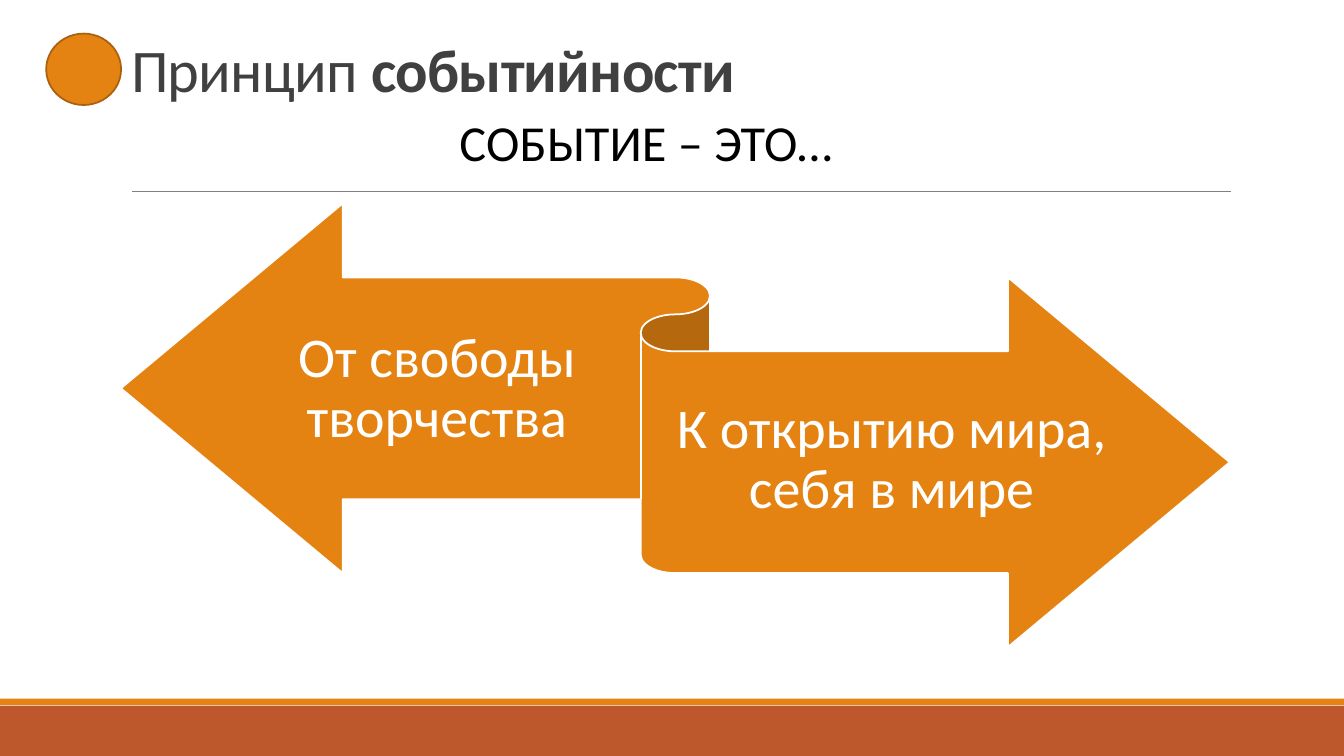
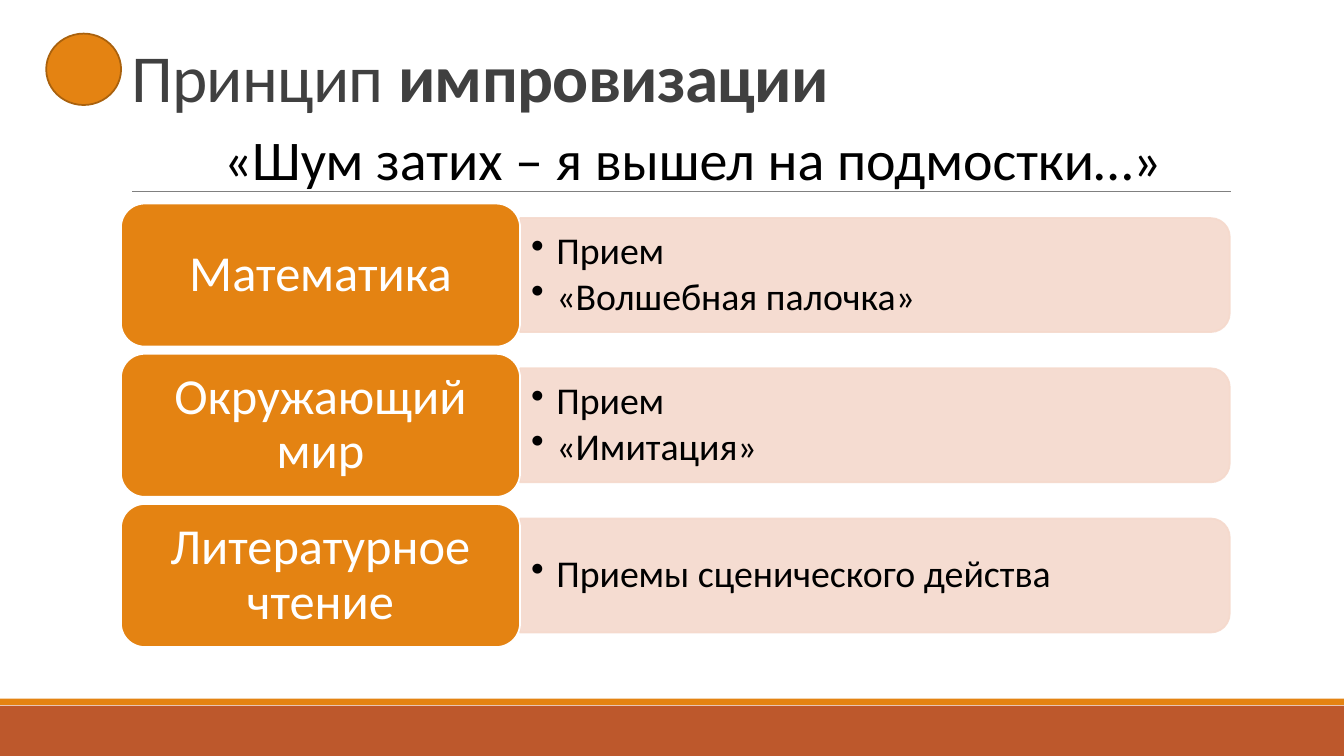
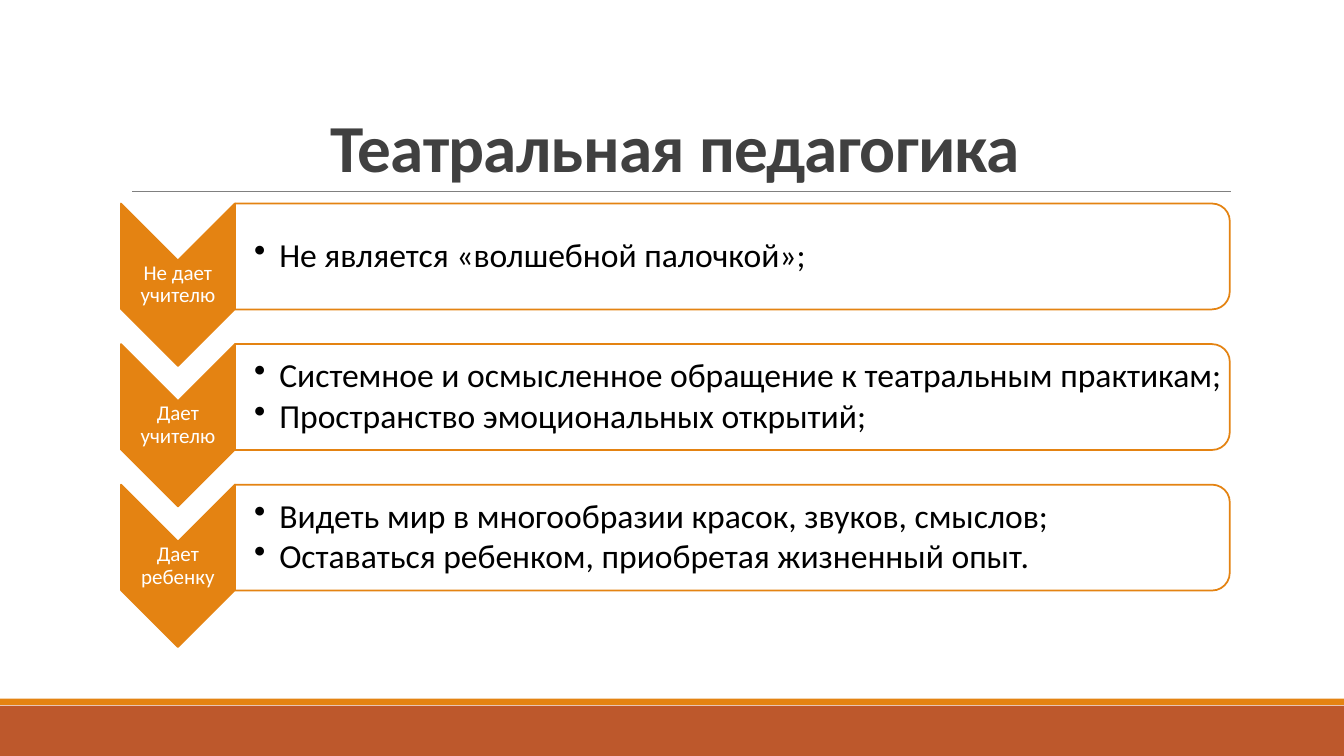
from lxml.etree import SubElement
from pptx import Presentation
from pptx.dml.color import RGBColor
from pptx.enum.shapes import MSO_CONNECTOR, MSO_SHAPE
from pptx.enum.text import MSO_ANCHOR, MSO_AUTO_SIZE, PP_ALIGN
from pptx.oxml.ns import qn
from pptx.util import Pt

LEFT, CENTER = PP_ALIGN.LEFT, PP_ALIGN.CENTER
TOP, MIDDLE, BOTTOM = MSO_ANCHOR.TOP, MSO_ANCHOR.MIDDLE, MSO_ANCHOR.BOTTOM
RECTANGLE, OVAL = MSO_SHAPE.RECTANGLE, MSO_SHAPE.OVAL
ROUNDED, ROUNDED_TOP = MSO_SHAPE.ROUNDED_RECTANGLE, MSO_SHAPE.ROUND_2_SAME_RECTANGLE
RIBBON, CHEVRON = MSO_SHAPE.LEFT_RIGHT_RIBBON, MSO_SHAPE.CHEVRON

FONT = "Calibri"
COLORS = {
    "orange": "E48312",
    "dark_orange": "A9610D",
    "rust": "BD582C",
    "pale": "F5D9CC",
    "gray": "808080",
    "title": "404040",
    "black": "000000",
    "white": "FFFFFF",
}
CONTENT_LEFT, CONTENT_TOP, CONTENT_WIDTH = 86.4, 145.4, 792


def add_shape(slide, kind, left, top, width, height, fill, line=None, turned=False):
    """Add a shape by its visible box; a turned one is rotated clockwise by 90 degrees."""
    if turned:
        left, top = left + (width - height) / 2, top + (height - width) / 2
        width, height = height, width
    shape = slide.shapes.add_shape(kind, Pt(left), Pt(top), Pt(width), Pt(height))
    shape.rotation = 90 if turned else 0
    shape.shadow.inherit = False
    shape.fill.solid()
    shape.fill.fore_color.rgb = RGBColor.from_string(COLORS[fill])
    if line:
        shape.line.color.rgb = RGBColor.from_string(COLORS[line])
        shape.line.width = Pt(1.25)
    else:
        shape.line.fill.background()
    return shape


def write_text(shape, text, size, color, anchor=MIDDLE, alignment=CENTER,
               insets=(7.2, 3.6, 7.2, 3.6), line_spacing=0.9, bullets=False):
    """Fill a shape with text; insets run left, top, right, bottom."""
    frame = shape.text_frame
    frame.text = text
    frame.word_wrap = True
    frame.auto_size = MSO_AUTO_SIZE.NONE
    frame.vertical_anchor = anchor
    frame.margin_left, frame.margin_top, frame.margin_right, frame.margin_bottom = map(Pt, insets)
    for paragraph in frame.paragraphs:
        paragraph.alignment = alignment
        paragraph.line_spacing = line_spacing
        if bullets:
            paragraph.space_after = Pt(round(size * 0.12, 1))
            properties = paragraph._p.get_or_add_pPr()
            properties.set("marL", str(Pt(18)))
            properties.set("indent", str(-Pt(18)))
            SubElement(properties, qn("a:buChar"), char="•")
        for run in paragraph.runs:
            run.font.name = FONT
            run.font.size = Pt(size)
            run.font.color.rgb = RGBColor.from_string(COLORS[color])


presentation = Presentation()
presentation.slide_width, presentation.slide_height = Pt(960), Pt(540)
layout = presentation.slide_layouts[5]

# Titles: plain part, bold part, size, top, height, alignment
titles = [
    ("Принцип ", "событийности", 43.2, 18.7, 59.8, LEFT),
    ("Принцип ", "импровизации", 48, 23.8, 62.6, LEFT),
    ("", "Театральная педагогика", 48, 22.3, 114.5, CENTER),
]
slides = []
for plain, bold, size, top, height, alignment in titles:
    slide = presentation.slides.add_slide(layout)
    title = slide.shapes.title
    title.left, title.top = Pt(CONTENT_LEFT), Pt(top)
    title.width, title.height = Pt(CONTENT_WIDTH), Pt(height)
    write_text(title, plain, size, "title", BOTTOM, alignment, line_spacing=0.85)
    paragraph = title.text_frame.paragraphs[0]
    bold_run = paragraph.add_run()
    bold_run.text = bold
    bold_run.font.bold = True
    for run in paragraph.runs:
        run.font.name = FONT
        run.font.size = Pt(size)
        run.font.color.rgb = RGBColor.from_string(COLORS["title"])
        run._r.get_or_add_rPr().set("spc", "-50")
    slides.append(slide)
event_slide, improvisation_slide, pedagogy_slide = slides

# The bands and the rule under the title belong to the layout
rule = event_slide.shapes.add_connector(MSO_CONNECTOR.STRAIGHT, Pt(94.5), Pt(137), Pt(879), Pt(137))
rule.line.color.rgb = RGBColor.from_string(COLORS["gray"])
rule.line.width = Pt(0.5)
SubElement(rule.element.spPr, qn("a:effectLst"))
footer_band = add_shape(event_slide, RECTANGLE, 0, 504, 960, 36, "rust")
footer_stripe = add_shape(event_slide, RECTANGLE, 0, 499, 960, 4.6, "orange")
for shared in (footer_band, footer_stripe, rule):
    layout.shapes.element.append(shared.element)

# Marker circle and subtitle of the two principles
subtitles = [
    (event_slide, "СОБЫТИЕ – ЭТО…", 36, 321, 75.6, 290),
    (improvisation_slide, "«Шум затих – я вышел на подмостки…»", 40, 152.6, 85.7, 697),
]
for slide, text, size, left, top, width in subtitles:
    add_shape(slide, OVAL, 33, 24, 53.5, 51, "orange", "dark_orange")
    subtitle = slide.shapes.add_textbox(Pt(left), Pt(top), Pt(width), Pt(56))
    write_text(subtitle, text, size, "black", TOP, LEFT, line_spacing=1.0)

# Slide 1: ribbon with two directions
add_shape(event_slide, RIBBON, CONTENT_LEFT, CONTENT_TOP, CONTENT_WIDTH, 316.8, "orange", "white")
directions = [
    ("От свободы творчества", 181.4, 200.9, 261.4),
    ("К открытию мира, себя в мире", 482.4, 251.3, 308.9),
]
for text, left, top, width in directions:
    direction = event_slide.shapes.add_textbox(Pt(left), Pt(top), Pt(width), Pt(155.5))
    write_text(direction, text, 40, "white", insets=(0, 11.5, 0, 12.2))

# Slide 2: school subjects and their techniques
subjects = [
    ("Математика", "Прием\n«Волшебная палочка»"),
    ("Окружающий мир", "Прием\n«Имитация»"),
    ("Литературное чтение", "Приемы сценического действа"),
]
label_width, label_height, panel_height, row_step = 285.1, 102.2, 81.4, 107.3
panel_left, panel_width = CONTENT_LEFT + label_width, CONTENT_WIDTH - label_width
for row, (subject, techniques) in enumerate(subjects):
    top = CONTENT_TOP + row * row_step
    panel_top = top + (label_height - panel_height) / 2
    panel = add_shape(improvisation_slide, ROUNDED_TOP, panel_left, panel_top,
                      panel_width, panel_height, "pale", "pale", turned=True)
    for color in panel.element.spPr.iter(qn("a:srgbClr")):
        SubElement(color, qn("a:alpha"), val="90000")
    technique_box = improvisation_slide.shapes.add_textbox(
        Pt(panel_left), Pt(panel_top), Pt(panel_width), Pt(panel_height))
    write_text(technique_box, techniques, 27, "black", alignment=LEFT,
               insets=(7.9, 4.3, 7.9, 4.3), bullets=True)
    label = add_shape(improvisation_slide, ROUNDED, CONTENT_LEFT, top,
                      label_width, label_height, "orange", "white")
    write_text(label, subject, 36, "white", insets=(10.8, 5, 10.8, 5))

# Slide 3: chevrons with statements
statements = [
    ("Не дает учителю", "Не является «волшебной палочкой»;"),
    ("Дает учителю", "Системное и осмысленное обращение к театральным практикам;\n"
                     "Пространство эмоциональных открытий;"),
    ("Дает ребенку", "Видеть мир в многообразии красок, звуков, смыслов;\n"
                     "Оставаться ребенком, приобретая жизненный опыт."),
]
chevron_width, chevron_height, panel_height, row_step = 81.4, 116, 75.6, 100.4
panel_left, panel_width = CONTENT_LEFT + chevron_width, CONTENT_WIDTH - chevron_width
for row, (heading, lines) in enumerate(statements):
    top = CONTENT_TOP + row * row_step
    add_shape(pedagogy_slide, CHEVRON, CONTENT_LEFT, top, chevron_width, chevron_height,
              "orange", "orange", turned=True)
    heading_box = pedagogy_slide.shapes.add_textbox(
        Pt(CONTENT_LEFT), Pt(top + chevron_width / 2), Pt(chevron_width), Pt(34.6))
    write_text(heading_box, heading, 15, "white", insets=(0.7, 0.7, 0.7, 0.7))
    add_shape(pedagogy_slide, ROUNDED_TOP, panel_left, top, panel_width, panel_height,
              "white", "orange", turned=True)
    lines_box = pedagogy_slide.shapes.add_textbox(
        Pt(panel_left), Pt(top), Pt(panel_width), Pt(panel_height))
    write_text(lines_box, lines, 24, "black", alignment=LEFT,
               insets=(13.7, 1.4, 1.4, 1.4), bullets=True)

presentation.save("out.pptx")
